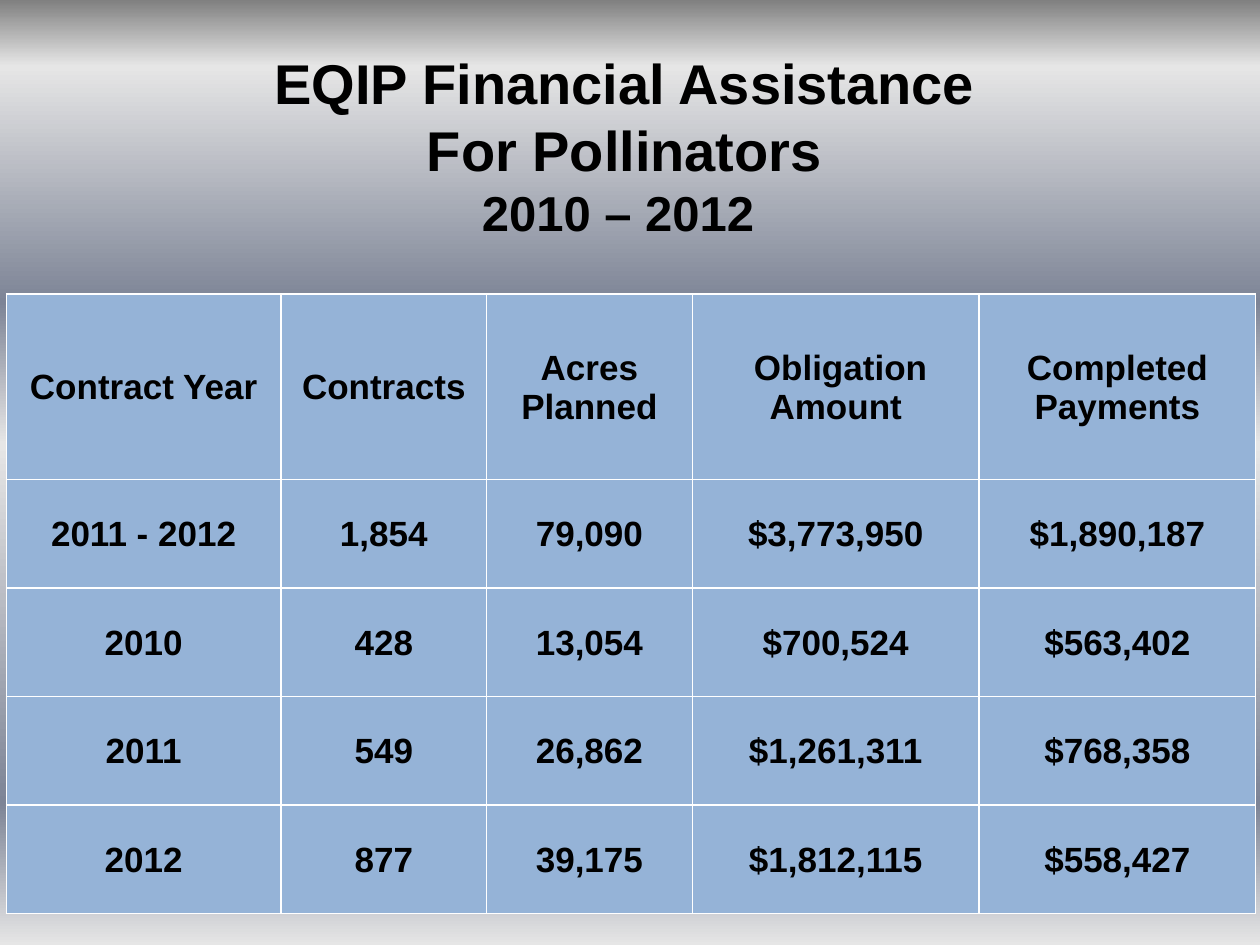
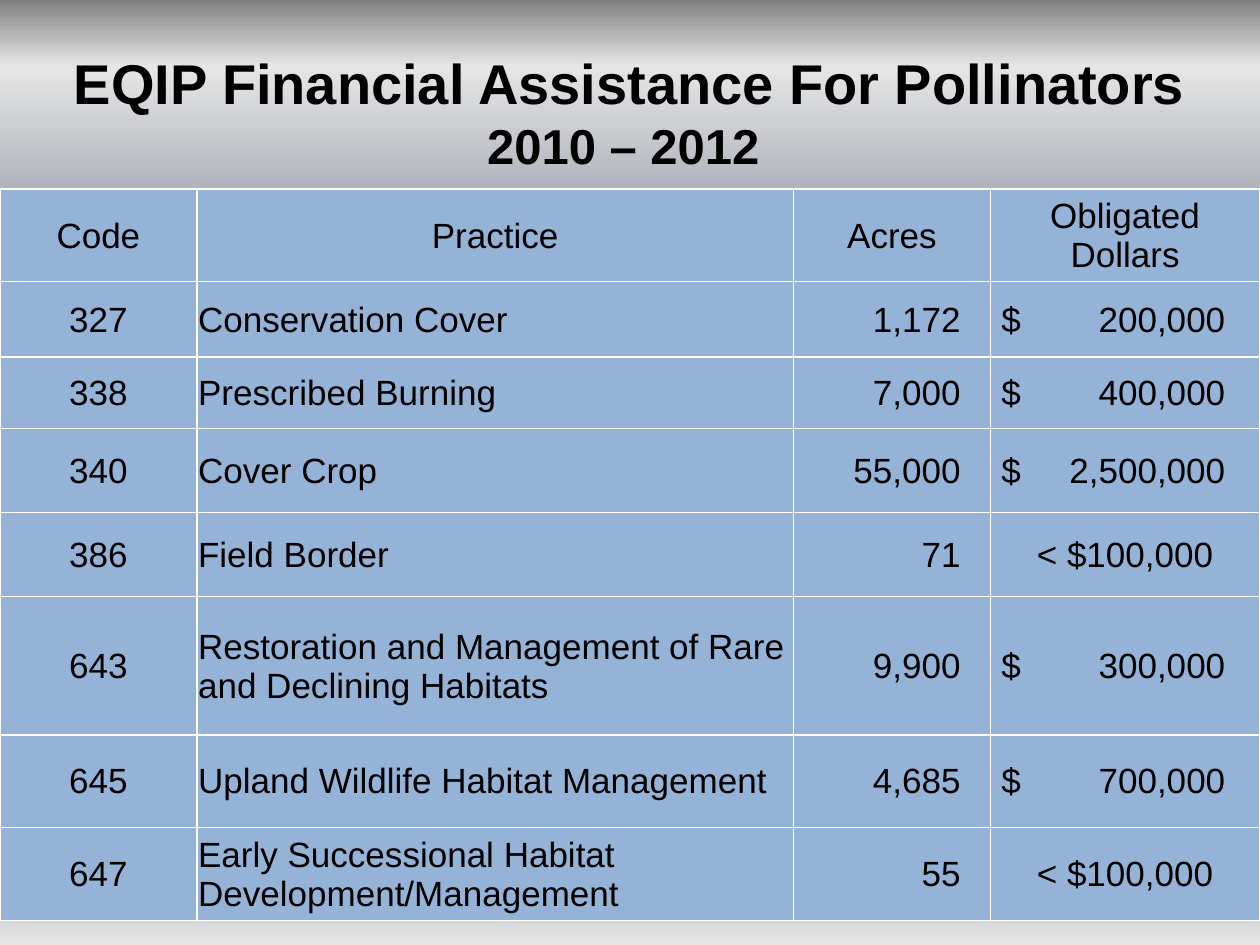
import pptx
import pptx.dml.color
import pptx.enum.text
import pptx.oxml.ns
import pptx.util
from lxml import etree

Pt = pptx.util.Pt
qn = pptx.oxml.ns.qn
ALIGN = pptx.enum.text.PP_ALIGN

COLORS = {
    "text": "000000",
    "cell": "95B3D7",
    "border": "FFFFFF",
    "dark": "808080",
    "light": "E6E6E6",
    "slate": "7D8496",
}
BACKGROUND_STOPS = [(0, "dark"), (7, "light"), (32, "slate"),
                    (47, "light"), (85, "slate"), (100, "light")]
FONT = "Arial"
TITLE_SIZE, PERIOD_SIZE, TABLE_SIZE = 32, 28, 20
CELL_INSET = 0.72
ACRES_INSET = 17
DOLLAR_INSET, DOLLAR_TAB = 6.3, 128

CONTRACT_ROWS = [
    ["Contract Year", "Contracts", "Acres Planned", " Obligation Amount",
     "Completed Payments"],
    ["2011 - 2012", "1,854", "79,090", "$3,773,950", "$1,890,187"],
    ["2010", "428", "13,054", "$700,524", "$563,402"],
    ["2011", "549", "26,862", "$1,261,311", "$768,358"],
    ["2012", "877", "39,175", "$1,812,115", "$558,427"],
]
PRACTICE_ROWS = [
    ["Code", "Practice", "Acres", "Obligated Dollars"],
    ["327", "Conservation Cover", "1,172", "$\t200,000"],
    ["338", "Prescribed Burning", "7,000", "$\t400,000"],
    ["340", "Cover Crop", "55,000", "$\t2,500,000"],
    ["386", "Field Border", "71", "< $100,000"],
    ["643", "Restoration and Management of Rare and Declining Habitats",
     "9,900", "$\t300,000"],
    ["645", "Upland Wildlife Habitat Management", "4,685", "$\t700,000"],
    ["647", "Early Successional Habitat Development/Management", "55",
     "< $100,000"],
]


class Deck:
    def __init__(self):
        self.presentation = pptx.Presentation()
        self.presentation.slide_width = Pt(720)
        self.presentation.slide_height = Pt(540)
        self.slide = None
        self.paint_background()

    def paint_background(self):
        """Give the master the vertical gradient that every slide inherits."""
        master = self.presentation.slide_master
        fill = master.background.fill
        fill.gradient()
        fill.gradient_angle = 270
        stops = master.element.find(".//" + qn("a:gsLst"))
        for stop in list(stops):
            stops.remove(stop)
        for percent, color in BACKGROUND_STOPS:
            stop = etree.SubElement(stops, qn("a:gs"), pos=str(percent * 1000))
            etree.SubElement(stop, qn("a:srgbClr"), val=COLORS[color])

    def new_slide(self):
        blank = self.presentation.slide_layouts[6]
        self.slide = self.presentation.slides.add_slide(blank)

    def format_runs(self, paragraph, size, bold):
        for run in paragraph.runs:
            run.font.name = FONT
            run.font.size = Pt(size)
            run.font.bold = bold
            run.font.color.rgb = pptx.dml.color.RGBColor.from_string(COLORS["text"])

    def title(self, left, width, height, headings):
        """Add the bold heading lines followed by the smaller period line."""
        box = self.slide.shapes.add_textbox(Pt(left), Pt(24), Pt(width), Pt(height))
        frame = box.text_frame
        frame.word_wrap = True
        frame.auto_size = pptx.enum.text.MSO_AUTO_SIZE.SHAPE_TO_FIT_TEXT
        frame.text = "\n".join(headings + ["2010 – 2012 "])
        for paragraph in frame.paragraphs:
            paragraph.alignment = ALIGN.CENTER
            self.format_runs(paragraph, TITLE_SIZE, True)
        self.format_runs(frame.paragraphs[-1], PERIOD_SIZE, True)

    def table(self, left, top, widths, heights, rows, bold=False):
        frame = self.slide.shapes.add_table(
            len(rows), len(widths), Pt(left), Pt(top), Pt(sum(widths)), Pt(sum(heights)))
        table = frame.table
        table.first_row = table.horz_banding = False
        for column, width in zip(table.columns, widths):
            column.width = Pt(width)
        for row, height, texts in zip(table.rows, heights, rows):
            row.height = Pt(height)
            for cell, text in zip(row.cells, texts):
                self.fill_cell(cell, text, bold)
        return table

    def fill_cell(self, cell, text, bold):
        cell.text_frame.text = text
        cell.vertical_anchor = pptx.enum.text.MSO_ANCHOR.MIDDLE
        cell.margin_left = cell.margin_right = cell.margin_top = Pt(CELL_INSET)
        cell.margin_bottom = 0
        paragraph = cell.text_frame.paragraphs[0]
        paragraph.alignment = ALIGN.CENTER
        self.format_runs(paragraph, TABLE_SIZE, bold)
        properties = cell._tc.get_or_add_tcPr()
        for side in "LRTB":
            line = etree.SubElement(properties, qn("a:ln" + side), w=str(Pt(1)))
            solid = etree.SubElement(line, qn("a:solidFill"))
            etree.SubElement(solid, qn("a:srgbClr"), val=COLORS["border"])
        cell.fill.solid()
        cell.fill.fore_color.rgb = pptx.dml.color.RGBColor.from_string(COLORS["cell"])

    def align_dollars(self, cell):
        """Put the dollar sign at the left and the amount on a right tab stop."""
        cell.margin_left = Pt(DOLLAR_INSET)
        paragraph = cell.text_frame.paragraphs[0]
        paragraph.alignment = ALIGN.LEFT
        tabs = etree.SubElement(paragraph._p.get_or_add_pPr(), qn("a:tabLst"))
        etree.SubElement(tabs, qn("a:tab"), pos=str(Pt(DOLLAR_TAB)), algn="r")


def add_contracts_slide(deck):
    deck.new_slide()
    deck.table(3.6, 168, [157, 117.5, 117.5, 164, 158], [106] + [62] * 4,
               CONTRACT_ROWS, bold=True)
    deck.title(66, 582, 119, ["EQIP Financial Assistance", "For Pollinators"])


def add_practices_slide(deck):
    deck.new_slide()
    table = deck.table(0, 108, [112.5, 341, 112.5, 154],
                       [53, 43, 41, 48, 48, 79, 53, 53], PRACTICE_ROWS)
    for row in list(table.rows)[1:]:
        code, practice, acres, dollars = row.cells
        practice.text_frame.paragraphs[0].alignment = ALIGN.LEFT
        acres.text_frame.paragraphs[0].alignment = ALIGN.RIGHT
        acres.margin_right = Pt(ACRES_INSET)
        if "\t" in dollars.text_frame.text:
            deck.align_dollars(dollars)
    deck.title(18, 684, 80, ["EQIP Financial Assistance For Pollinators"])


def main():
    deck = Deck()
    add_contracts_slide(deck)
    add_practices_slide(deck)
    deck.presentation.save("out.pptx")


if __name__ == "__main__":
    main()
